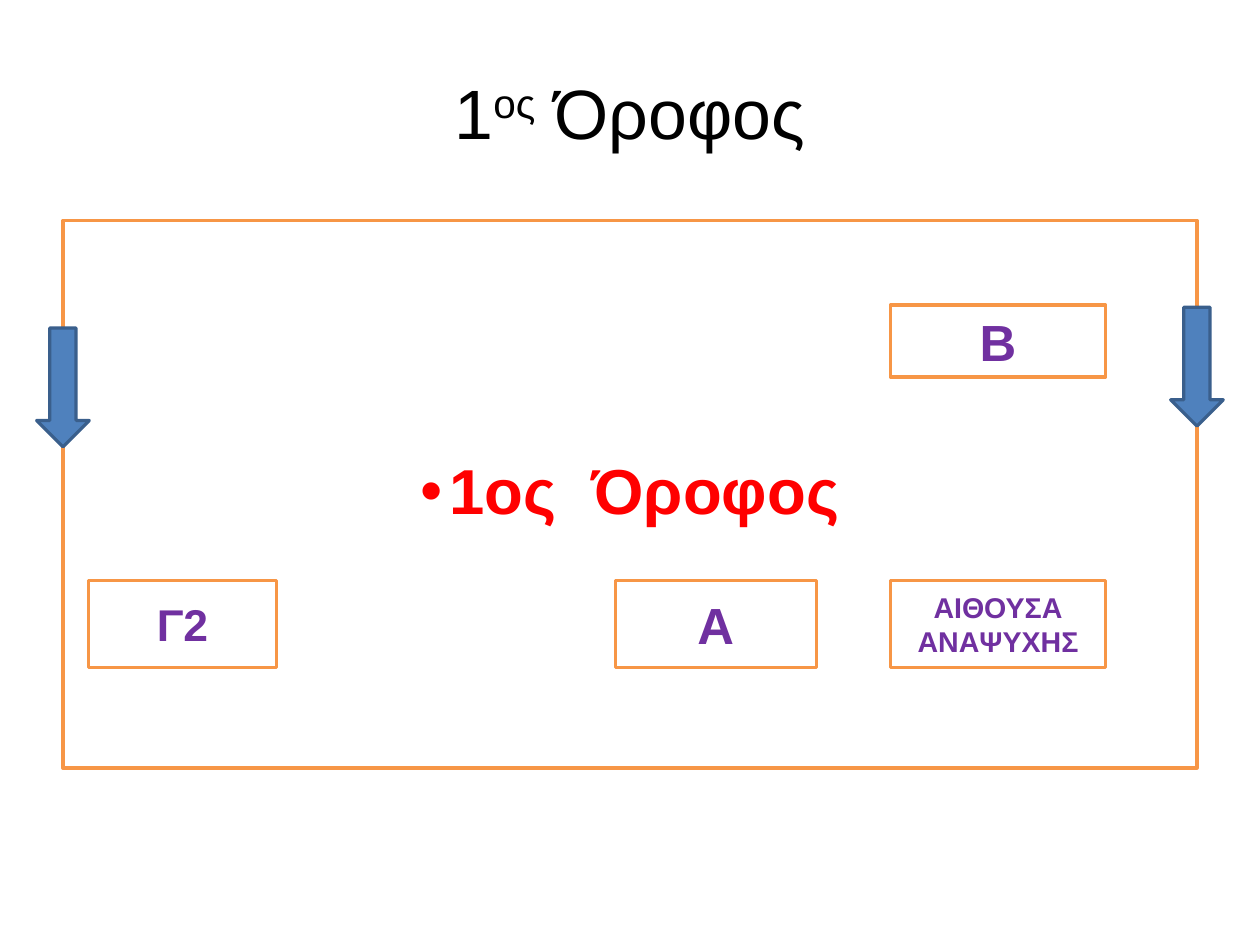
from dataclasses import dataclass

from lxml.etree import SubElement
from pptx import Presentation
from pptx.dml.color import RGBColor
from pptx.enum.shapes import MSO_SHAPE
from pptx.enum.text import MSO_ANCHOR, PP_ALIGN
from pptx.oxml.ns import qn
from pptx.shapes.autoshape import Shape
from pptx.slide import Slide
from pptx.text.text import TextFrame, _Paragraph
from pptx.util import Cm, Pt

COLORS = {
    "white": "FFFFFF",
    "black": "000000",
    "orange": "F79646",
    "purple": "7030A0",
    "red": "FF0000",
    "blue": "4F81BD",
    "navy": "3A5F8C",
}
FRAME_LEFT, FRAME_TOP, FRAME_W, FRAME_H = 1.4, 4.9, 25.2, 12.17
ARROW_W, ARROW_H = 1.17, 2.64
LOWER_ROW, LOWER_H = 12.9, 1.93


@dataclass
class Room:
    name: str
    left: float
    top: float
    width: float
    height: float
    size: int


@dataclass
class Stair:
    center: float
    top: float


ROOMS = [
    Room("Β", 19.79, 6.78, 4.78, 1.6, 32),
    Room("ΑΙΘΟΥΣΑ ΑΝΑΨΥΧΗΣ", 19.79, LOWER_ROW, 4.78, LOWER_H, 18),
    Room("Α", 13.67, LOWER_ROW, 4.47, LOWER_H, 32),
    Room("Γ2", 1.96, LOWER_ROW, 4.19, LOWER_H, 28),
]
STAIRS = [Stair(FRAME_LEFT + FRAME_W, 6.83), Stair(FRAME_LEFT, 7.29)]


def rgb(name: str) -> RGBColor:
    return RGBColor.from_string(COLORS[name])


def add_box(s: Slide, kind: MSO_SHAPE, left: float, top: float, width: float,
            height: float, fill: str = "white", line: str = "orange") -> Shape:
    sp = s.shapes.add_shape(kind, Cm(left), Cm(top), Cm(width), Cm(height))
    sp.shadow.inherit = False
    sp.fill.solid()
    sp.fill.fore_color.rgb = rgb(fill)
    sp.line.color.rgb = rgb(line)
    sp.line.width = Pt(2)
    return sp


def write(tf: TextFrame, text: str, *, size: int, color: str, bold: bool = False,
          baseline: int = 0, spacing: float = 1.0) -> _Paragraph:
    """Append a run to the first paragraph, centred both ways."""
    tf.word_wrap = True
    tf.vertical_anchor = MSO_ANCHOR.MIDDLE
    p = tf.paragraphs[0]
    p.alignment = PP_ALIGN.CENTER
    p.line_spacing = spacing
    r = p.add_run()
    r.text = text
    r.font.name = "Arial"
    r.font.size = Pt(size)
    r.font.bold = bold
    r.font.color.rgb = rgb(color)
    if baseline:
        r.font._element.set("baseline", str(baseline * 1000))
    return p


def clear_margins(tf: TextFrame) -> None:
    tf.margin_left = tf.margin_top = tf.margin_right = tf.margin_bottom = 0


def add_bullet(p: _Paragraph, indent: float) -> None:
    pPr = p._p.get_or_add_pPr()
    pPr.set("marL", str(Cm(indent)))
    pPr.set("indent", str(-Cm(indent)))
    SubElement(pPr, qn("a:buFont")).set("typeface", "Arial")
    SubElement(pPr, qn("a:buChar")).set("char", "•")


def add_title(s: Slide) -> None:
    tf = s.shapes.add_textbox(Cm(FRAME_LEFT), Cm(0.84), Cm(FRAME_W), Cm(3.5)).text_frame
    clear_margins(tf)
    for text, baseline in (("1", 0), ("ος", 30), (" Όροφος", 0)):
        write(tf, text, size=44, color="black", baseline=baseline, spacing=0.9)


def add_floor(s: Slide) -> None:
    sp = add_box(s, MSO_SHAPE.RECTANGLE, FRAME_LEFT, FRAME_TOP, FRAME_W, FRAME_H)
    clear_margins(sp.text_frame)
    p = write(sp.text_frame, "1ος  Όροφος", size=40, color="red", bold=True, spacing=0.9)
    p.space_before = Pt(10)
    add_bullet(p, 0.64)


def main() -> None:
    prs = Presentation()
    prs.slide_width, prs.slide_height = Cm(28), Cm(21)
    s = prs.slides.add_slide(prs.slide_layouts[6])
    add_title(s)
    add_floor(s)
    for room in ROOMS:
        sp = add_box(s, MSO_SHAPE.RECTANGLE, room.left, room.top, room.width, room.height)
        write(sp.text_frame, room.name, size=room.size, color="purple", bold=True)
    for stair in STAIRS:
        add_box(s, MSO_SHAPE.DOWN_ARROW, stair.center - ARROW_W / 2, stair.top,
                ARROW_W, ARROW_H, fill="blue", line="navy")
    prs.save("out.pptx")


if __name__ == "__main__":
    main()
